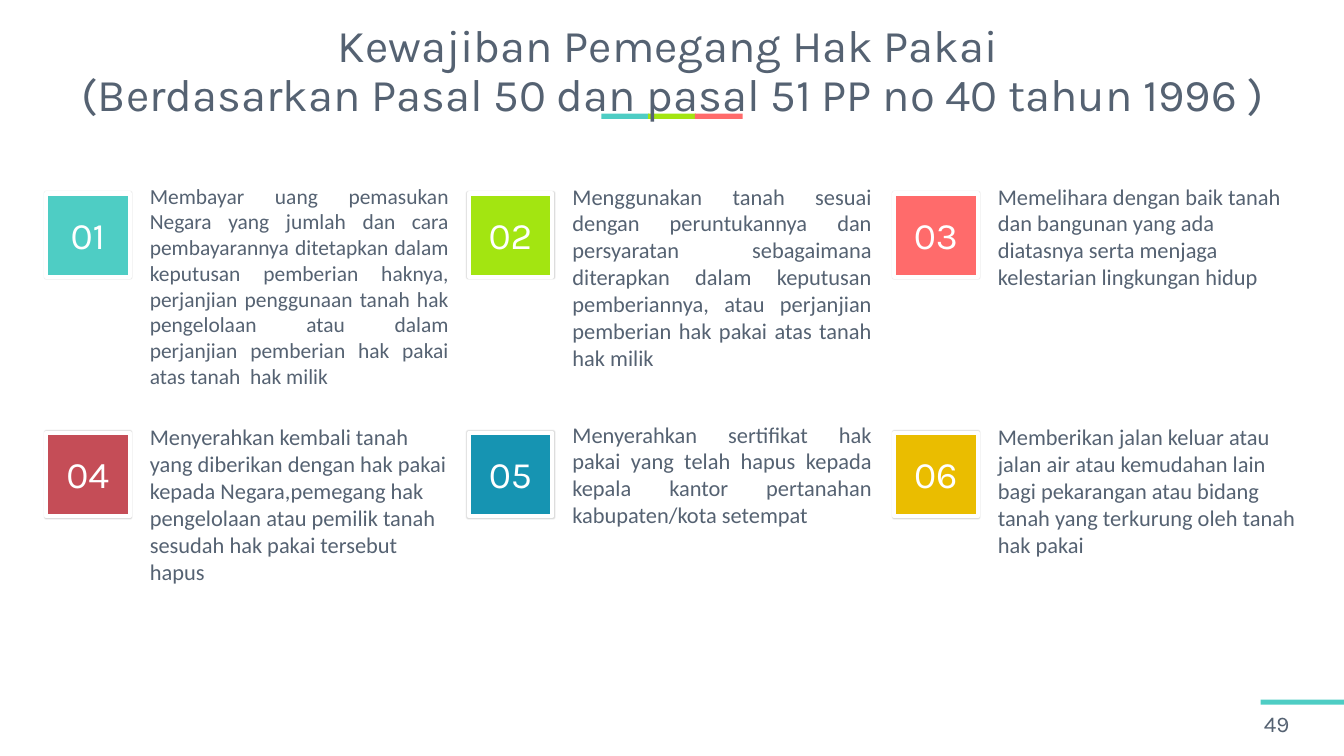
from dataclasses import dataclass

from lxml import etree
from pptx import Presentation
from pptx.dml.color import RGBColor
from pptx.enum.shapes import MSO_SHAPE
from pptx.enum.text import MSO_ANCHOR, PP_ALIGN
from pptx.oxml.ns import qn
from pptx.util import Pt

RECT = MSO_SHAPE.RECTANGLE
TOP, MIDDLE = MSO_ANCHOR.TOP, MSO_ANCHOR.MIDDLE
LEFT, CENTER, JUSTIFY = PP_ALIGN.LEFT, PP_ALIGN.CENTER, PP_ALIGN.JUSTIFY

WHITE = RGBColor(0xFF, 0xFF, 0xFF)
SLATE = RGBColor(0x55, 0x62, 0x72)
TEAL = RGBColor(0x4E, 0xCD, 0xC4)
LIME = RGBColor(0xA3, 0xE5, 0x11)
CORAL = RGBColor(0xFF, 0x6B, 0x6B)
CRIMSON = RGBColor(0xC5, 0x4D, 0x57)
BLUE = RGBColor(0x16, 0x94, 0xB2)
GOLD = RGBColor(0xEA, 0xBD, 0x00)

HEADING_FONT, BODY_FONT = "Karla", "Calibri"
COLUMNS = (49.7, 502.5, 958.3)
ROWS = (207.4, 463.7)
SQUARE = 89.3
BAR_HEIGHT = 5.6


@dataclass(frozen=True)
class Box:
    left: float
    top: float
    width: float
    height: float

    def lengths(self) -> tuple:
        return Pt(self.left), Pt(self.top), Pt(self.width), Pt(self.height)


@dataclass(frozen=True)
class Style:
    size: float
    font: str = HEADING_FONT
    color: RGBColor = SLATE
    align: PP_ALIGN = LEFT
    anchor: MSO_ANCHOR = TOP
    spacing: float = 1.0


@dataclass(frozen=True)
class Duty:
    color: RGBColor
    text: str
    top: float
    height: float
    align: PP_ALIGN = LEFT
    size: float = 24


DUTIES = (
    Duty(TEAL, "Membayar uang pemasukan Negara yang jumlah dan cara pembayarannya "
         "ditetapkan dalam keputusan pemberian haknya, perjanjian penggunaan tanah hak "
         "pengelolaan atau dalam perjanjian pemberian hak pakai atas tanah  hak milik",
         192.2, 239.8, JUSTIFY, 23),
    Duty(LIME, "Menggunakan tanah sesuai dengan peruntukannya dan persyaratan "
         "sebagaimana diterapkan dalam keputusan pemberiannya, atau perjanjian "
         "pemberian hak pakai atas tanah hak milik ", 192.2, 239.8, JUSTIFY),
    Duty(CORAL, "Memelihara dengan baik tanah dan bangunan yang ada diatasnya serta "
         "menjaga kelestarian lingkungan hidup", 192.2, 239.8),
    Duty(CRIMSON, "Menyerahkan kembali tanah yang diberikan dengan hak pakai kepada "
         "Negara,pemegang hak pengelolaan atau pemilik tanah sesudah hak pakai "
         "tersebut hapus", 450, 237.6),
    Duty(BLUE, "Menyerahkan sertifikat hak pakai yang telah hapus kepada kepala kantor "
         "pertanahan kabupaten/kota setempat", 447.1, 241.2, JUSTIFY),
    Duty(GOLD, "Memberikan jalan keluar atau jalan air atau kemudahan lain bagi "
         "pekarangan atau bidang tanah yang terkurung oleh tanah hak pakai", 450, 237.6),
)


def add_rect(s, box: Box, color: RGBColor):
    """Add a flat rectangle without outline."""
    sp = s.shapes.add_shape(RECT, *box.lengths())
    sp.shadow.inherit = False
    sp.fill.solid()
    sp.fill.fore_color.rgb = color
    sp.line.fill.background()
    return sp


def add_framed_square(s, box: Box, color: RGBColor) -> None:
    """Add a square with a white frame and a faint shadow."""
    sp = add_rect(s, box, color)
    sp.line.color.rgb = WHITE
    sp.line.width = Pt(4.5)
    effects = sp.element.spPr.find(qn("a:effectLst"))
    shadow = etree.SubElement(effects, qn("a:outerShdw"), blurRad=str(Pt(1)),
                              dist="0", dir="0", algn="ctr", rotWithShape="0")
    black = etree.SubElement(shadow, qn("a:srgbClr"), val="000000")
    etree.SubElement(black, qn("a:alpha"), val="15000")


def write(sp, text: str, style: Style) -> None:
    """Fill a shape with one styled paragraph."""
    tf = sp.text_frame
    tf.word_wrap = True
    tf.vertical_anchor = style.anchor
    p = tf.paragraphs[0]
    p.text = text
    p.alignment = style.align
    p.line_spacing = style.spacing
    for r in p.runs:
        r.font.name = style.font
        r.font.size = Pt(style.size)
        r.font.color.rgb = style.color


def add_text(s, box: Box, text: str, style: Style) -> None:
    """Add a text box with one styled paragraph."""
    write(s.shapes.add_textbox(*box.lengths()), text, style)


def add_duty(s, index: int, duty: Duty) -> None:
    """Add a numbered square with its description."""
    row, column = divmod(index, len(COLUMNS))
    x, y = COLUMNS[column], ROWS[row]
    add_framed_square(s, Box(x, y, SQUARE, SQUARE), duty.color)
    add_text(s, Box(x + 9.4, y + 16.5, 70, 55.4), f"{index + 1:02}",
             Style(40, color=WHITE, align=CENTER))
    body = add_rect(s, Box(x + 103.7, duty.top, 334.8, duty.height), WHITE)
    write(body, duty.text, Style(duty.size, BODY_FONT, align=duty.align))


def main() -> None:
    """Build the slide and save it."""
    prs = Presentation()
    prs.slide_width, prs.slide_height = Pt(1440), Pt(810)
    s = prs.slides.add_slide(prs.slide_layouts[6])
    for i, color in enumerate((TEAL, LIME, CORAL)):
        add_rect(s, Box(644.4 + 50.1 * i, 121.7, 51, BAR_HEIGHT), color)
    add_rect(s, Box(1350.7, 749.5, 89.3, BAR_HEIGHT), TEAL)
    add_text(s, Box(38.9, 27.4, 1365, 100.8),
             "Kewajiban Pemegang Hak Pakai \v"
             "(Berdasarkan Pasal 50 dan pasal 51 PP no 40 tahun 1996 )",
             Style(48.6, align=CENTER, anchor=MIDDLE, spacing=0.9))
    add_text(s, Box(1347.1, 756, 92.9, 38.2), "49", Style(24, anchor=MIDDLE))
    for i, duty in enumerate(DUTIES):
        add_duty(s, i, duty)
    prs.save("out.pptx")


if __name__ == "__main__":
    main()
